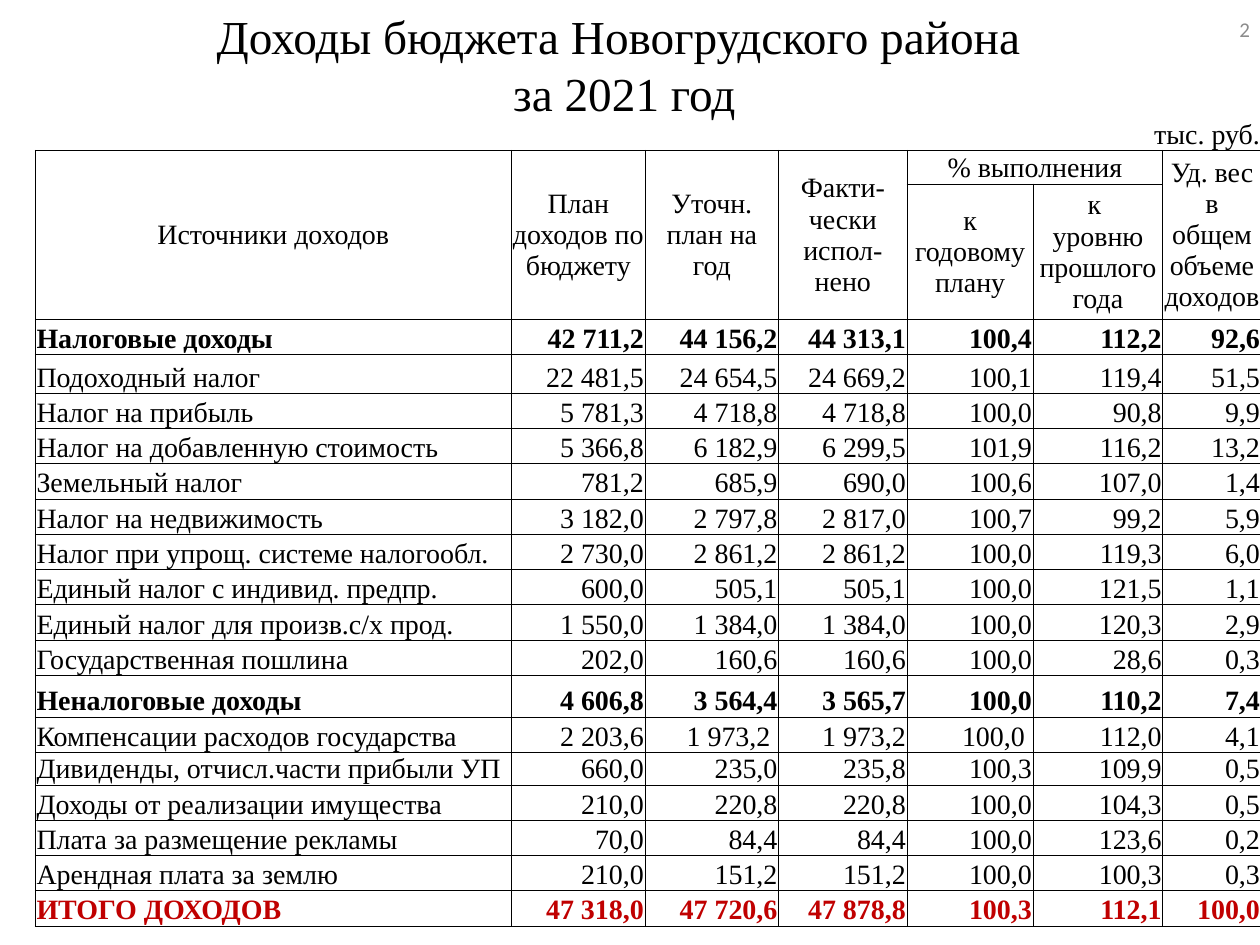
from lxml import etree
from pptx import Presentation
from pptx.dml.color import RGBColor
from pptx.enum.text import MSO_ANCHOR, MSO_AUTO_SIZE, PP_ALIGN
from pptx.oxml.ns import qn
from pptx.util import Inches, Pt

LEFT, CENTER, RIGHT = PP_ALIGN.LEFT, PP_ALIGN.CENTER, PP_ALIGN.RIGHT
MIDDLE, BOTTOM = MSO_ANCHOR.MIDDLE, MSO_ANCHOR.BOTTOM
NO_AUTOFIT = MSO_AUTO_SIZE.NONE

BLACK, RED, GRAY = "000000", "C00000", "8C8C8C"
COLUMN_WIDTHS = [3.78, 1.06, 1.06, 1.02, 1, 1.03, 0.78]
HEADER_HEIGHTS = [0.27, 0.27, 1.07]
INCOME_HEIGHT = 0.28
SPECIAL_HEIGHTS = {"Подоходный налог": 0.31, "Неналоговые доходы": 0.33,
                   "Дивиденды, отчисл.части прибыли УП": 0.26}
TOTAL = "ИТОГО ДОХОДОВ"
GROUPS = {"Налоговые доходы", "Неналоговые доходы", TOTAL}

# (row, column, row span, column span, text)
HEADERS = [
    (1, 0, 2, 1, "Источники доходов"),
    (1, 1, 2, 1, "План доходов по бюджету"),
    (1, 2, 2, 1, "Уточн. план на год"),
    (1, 3, 2, 1, "Факти-чески испол-нено"),
    (1, 4, 1, 2, "% выполнения"),
    (1, 6, 2, 1, "Уд. вес в общем объеме доходов"),
    (2, 4, 1, 1, "к годовому плану"),
    (2, 5, 1, 1, "к \nуровню прошлого года"),
]
INCOMES = [
    ("Налоговые доходы", "42 711,2", "44 156,2", "44 313,1", "100,4", "112,2", "92,6"),
    ("Подоходный налог", "22 481,5", "24 654,5", "24 669,2", "100,1", "119,4", "51,5"),
    ("Налог на прибыль", "5 781,3", "4 718,8", "4 718,8", "100,0", "90,8", "9,9"),
    ("Налог на добавленную стоимость", "5 366,8", "6 182,9", "6 299,5", "101,9", "116,2", "13,2"),
    ("Земельный налог", "781,2", "685,9", "690,0", "100,6", "107,0", "1,4"),
    ("Налог на недвижимость", "3 182,0", "2 797,8", "2 817,0", "100,7", "99,2", "5,9"),
    ("Налог при упрощ. системе налогообл.", "2 730,0", "2 861,2", "2 861,2", "100,0", "119,3", "6,0"),
    ("Единый налог с индивид. предпр.", "600,0", "505,1", "505,1", "100,0", "121,5", "1,1"),
    ("Единый налог для произв.с/х прод.", "1 550,0", "1 384,0", "1 384,0", "100,0", "120,3", "2,9"),
    ("Государственная пошлина", "202,0", "160,6", "160,6", "100,0", "28,6", "0,3"),
    ("Неналоговые доходы", "4 606,8", "3 564,4", "3 565,7", "100,0", "110,2", "7,4"),
    ("Компенсации расходов государства", "2 203,6", "1 973,2 ", "1 973,2", "100,0 ", "112,0", "4,1"),
    ("Дивиденды, отчисл.части прибыли УП", "660,0", "235,0", "235,8", "100,3", "109,9", "0,5"),
    ("Доходы от реализации имущества", "210,0", "220,8", "220,8", "100,0", "104,3", "0,5"),
    ("Плата за размещение рекламы", "70,0", "84,4", "84,4", "100,0", "123,6", "0,2"),
    ("Арендная плата за землю", "210,0", "151,2", "151,2", "100,0", "100,3", "0,3"),
    (TOTAL, "47 318,0", "47 720,6", "47 878,8", "100,3", "112,1", "100,0"),
]


def rgb(value):
    return RGBColor.from_string(value)


class BudgetSlide:
    font = "Times New Roman"
    title_size = 27
    table_size = 16

    def __init__(self, presentation):
        self.slide = presentation.slides.add_slide(presentation.slide_layouts[5])

    def format_text(self, frame, size, align, color=BLACK, bold=False, font=None):
        for paragraph in frame.paragraphs:
            paragraph.alignment = align
            for run in paragraph.runs:
                run.font.name = font or self.font
                run.font.size = Pt(size)
                run.font.bold = bold
                run.font.color.rgb = rgb(color)

    def title(self, text, left, top, width, height):
        title = self.slide.shapes.title
        title.left, title.top = Inches(left), Inches(top)
        title.width, title.height = Inches(width), Inches(height)
        frame = title.text_frame
        frame.text = text
        frame.auto_size = NO_AUTOFIT
        frame.vertical_anchor = MIDDLE
        self.format_text(frame, self.title_size, CENTER)
        for line_break in title.element.iter(qn("a:br")):
            etree.SubElement(line_break, qn("a:rPr"), sz=str(self.title_size * 100))

    def page_number(self, text, left, top, width, height):
        box = self.slide.shapes.add_textbox(
            Inches(left), Inches(top), Inches(width), Inches(height))
        frame = box.text_frame
        frame.text = text
        frame.word_wrap = True
        frame.vertical_anchor = MIDDLE
        self.format_text(frame, 12, RIGHT, GRAY, font="Calibri")

    def table(self, left, top, widths, heights):
        """Add a table with a plain black grid below an open first row."""
        table = self.slide.shapes.add_table(
            len(heights), len(widths), Inches(left), Inches(top),
            Inches(sum(widths)), Inches(sum(heights))).table
        table.first_row = table.horz_banding = False
        for column, width in zip(table.columns, widths):
            column.width = Inches(width)
        for index, (row, height) in enumerate(zip(table.rows, heights)):
            row.height = Inches(height)
            for cell in row.cells:
                cell.margin_left = cell.margin_right = cell.margin_top = Inches(0.01)
                cell.margin_bottom = 0
                self.borders(cell, "B" if index == 0 else "LRTB")
                cell.fill.background()
                etree.SubElement(cell.text_frame.paragraphs[0]._p, qn("a:endParaRPr"),
                                 sz=str(self.table_size * 100))
        return table

    def borders(self, cell, drawn_sides):
        properties = cell._tc.get_or_add_tcPr()
        for side in "LRTB":
            line = etree.SubElement(properties, qn(f"a:ln{side}"), w=str(Pt(0.5)))
            if side in drawn_sides:
                fill = etree.SubElement(line, qn("a:solidFill"))
                etree.SubElement(fill, qn("a:srgbClr"), val=BLACK)
            else:
                etree.SubElement(line, qn("a:noFill"))

    def cell(self, cell, text, align, anchor=BOTTOM, color=BLACK, bold=False):
        cell.text = text
        cell.vertical_anchor = anchor
        self.format_text(cell.text_frame, self.table_size, align, color, bold)


def main():
    presentation = Presentation()
    presentation.slide_width, presentation.slide_height = Inches(10), Inches(7.5)
    budget = BudgetSlide(presentation)
    budget.title("Доходы бюджета Новогрудского района \vза 2021 год", 0.23, 0.16, 9.45, 0.7)

    income_heights = [SPECIAL_HEIGHTS.get(income[0], INCOME_HEIGHT) for income in INCOMES]
    table = budget.table(0.28, 0.91, COLUMN_WIDTHS, HEADER_HEIGHTS + income_heights)

    unit = table.cell(0, 5)
    unit.merge(table.cell(0, 6))
    budget.cell(unit, "тыс. руб.", RIGHT)

    for row, column, row_span, column_span, text in HEADERS:
        header = table.cell(row, column)
        if row_span * column_span > 1:
            header.merge(table.cell(row + row_span - 1, column + column_span - 1))
        budget.cell(header, text, CENTER, MIDDLE)

    for row, income in enumerate(INCOMES, len(HEADER_HEIGHTS)):
        source = income[0]
        color = RED if source == TOTAL else BLACK
        for column, text in enumerate(income):
            budget.cell(table.cell(row, column), text, RIGHT if column else LEFT,
                        color=color, bold=source in GROUPS)

    budget.page_number("2", 7.69, 0.03, 2.33, 0.4)
    presentation.save("out.pptx")


if __name__ == "__main__":
    main()
